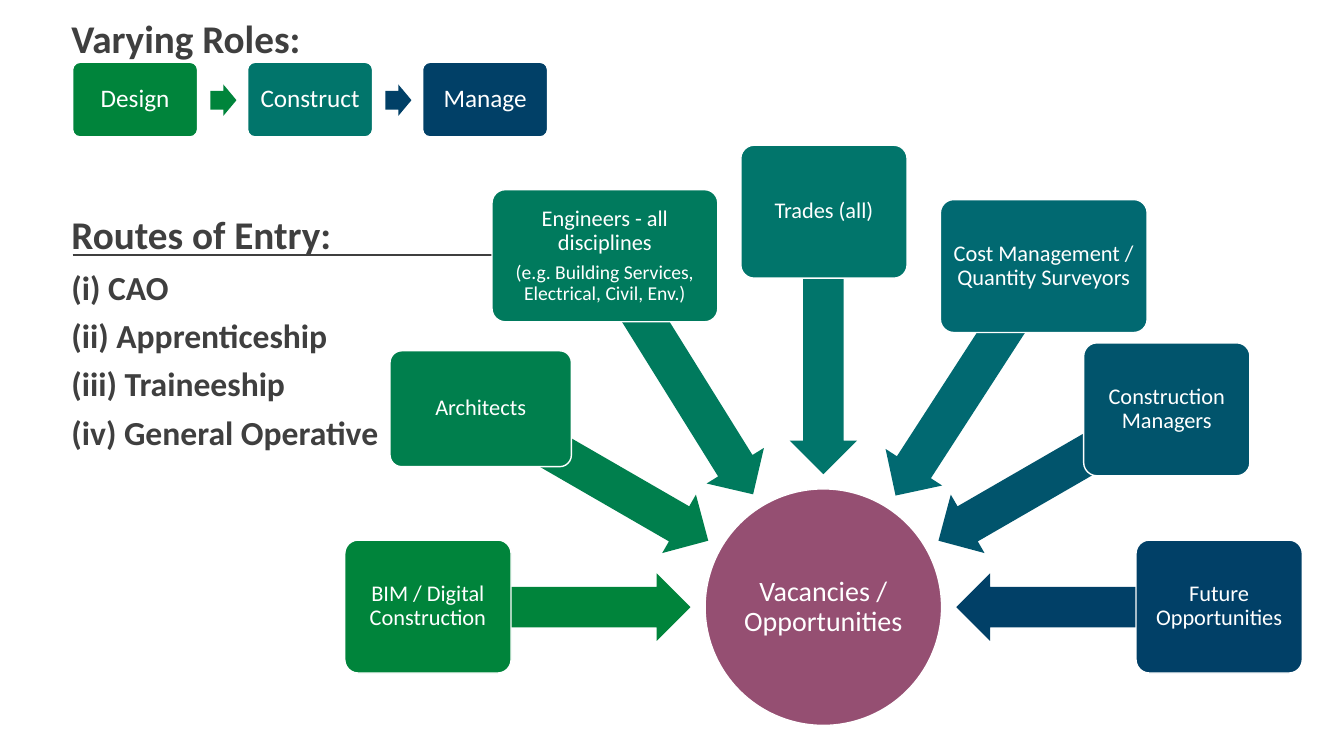
import math

import pptx
import pptx.dml.color
import pptx.enum.shapes
import pptx.enum.text
import pptx.oxml.ns
import pptx.util
from lxml import etree

Cm = pptx.util.Cm
Pt = pptx.util.Pt
Shape = pptx.enum.shapes.MSO_SHAPE
Align = pptx.enum.text.PP_ALIGN
Anchor = pptx.enum.text.MSO_ANCHOR
qn = pptx.oxml.ns.qn


class Theme:
    font = "Calibri"
    dark = "3F3F3F"
    white = "FFFFFF"
    plum = "954F72"
    green = "00843B"
    teal = "01756B"
    navy = "014067"
    fan = [green, "007F4D", "007A5D", teal, "016971", "01546C", navy]
    head = 28
    list = 24
    hub = 20
    step = 18
    role = 16
    note = 14


def write(frame, text, sizes, color=Theme.white, bold=False, align=Align.CENTER,
          anchor=Anchor.MIDDLE, inset=0.08, lead=0.9, gap=0):
    frame.word_wrap = True
    frame.auto_size = pptx.enum.text.MSO_AUTO_SIZE.NONE
    frame.vertical_anchor = anchor
    frame.margin_left = frame.margin_right = Cm(inset)
    frame.margin_top = frame.margin_bottom = Cm(min(inset, 0.13))
    for n, line in enumerate(text.split("\n")):
        para = frame.add_paragraph() if n else frame.paragraphs[0]
        para.alignment = align
        para.line_spacing = lead
        para.space_before = Pt(gap if n else 0)
        para.space_after = Pt(0)
        run = para.add_run()
        run.text = line
        run.font.name = Theme.font
        run.font.size = Pt(sizes[min(n, len(sizes) - 1)])
        run.font.bold = bold
        run.font.color.rgb = pptx.dml.color.RGBColor.from_string(color)


def draw(kind, left, top, wide, high, fill, edge=False, adjust=()):
    shape = slide.shapes.add_shape(kind, Cm(left), Cm(top), Cm(wide), Cm(high))
    shape.shadow.inherit = False
    shape.fill.solid()
    shape.fill.fore_color.rgb = pptx.dml.color.RGBColor.from_string(fill)
    if edge:
        shape.line.color.rgb = pptx.dml.color.RGBColor.from_string(Theme.white)
        shape.line.width = Pt(1)
    else:
        shape.line.fill.background()
    for n, value in enumerate(adjust):
        shape.adjustments[n] = value
    return shape


deck = pptx.Presentation()
deck.slide_width = Cm(33.87)
deck.slide_height = Cm(19.05)
slide = deck.slides.add_slide(deck.slide_layouts[1])

left_text = dict(color=Theme.dark, bold=True, align=Align.LEFT,
                 anchor=Anchor.TOP, inset=0.25, lead=1.2)

title = slide.shapes.title
title.left, title.top, title.width, title.height = Cm(1.55), Cm(4.93), Cm(10.1), Cm(1.6)
write(title.text_frame, "Routes of Entry:", [Theme.head], **left_text)

routes = slide.placeholders[1]
routes.left, routes.top, routes.width, routes.height = Cm(1.55), Cm(6.38), Cm(10.1), Cm(5.3)
write(routes.text_frame,
      "(i) CAO\n(ii) Apprenticeship\n(iii) Traineeship\n(iv) General Operative",
      [Theme.list], **left_text)
for para in routes.text_frame.paragraphs:
    props = para._p.get_or_add_pPr()
    props.set("marL", "0")
    props.set("indent", "0")
    etree.SubElement(props, qn("a:buNone"))

rule = slide.shapes.add_connector(pptx.enum.shapes.MSO_CONNECTOR.STRAIGHT,
                                  Cm(1.83), Cm(6.43), Cm(13.26), Cm(6.43))
rule.line.color.rgb = pptx.dml.color.RGBColor.from_string(Theme.dark)
rule.line.width = Pt(1.5)
etree.SubElement(rule._element.spPr, qn("a:effectLst"))

hub_x, hub_y, radius, reach, thick = 20.75, 15.3, 2.98, 3.35, 1.7
hub = draw(Shape.OVAL, hub_x - radius, hub_y - radius, 2 * radius, 2 * radius,
           Theme.plum, edge=True)
write(hub.text_frame, "Vacancies / Opportunities", [Theme.hub], inset=0.03)

roles = [
    ("BIM / Digital Construction", 180, 6.6, (8.69, 13.61, 4.19, 3.35)),
    ("Architects", 210, 6.6, (9.83, 8.84, 4.57, 2.92)),
    ("Engineers - all disciplines\n(e.g. Building Services, Electrical, Civil, Env.)",
     238.1, 7.04, (12.4, 4.78, 5.69, 3.33)),
    ("Trades (all)", 270, 6.6, (18.67, 3.66, 4.19, 3.35)),
    ("Cost Management / Quantity Surveyors", 302.9, 6.83, (23.7, 5.03, 5.21, 3.35)),
    ("Construction Managers", 330, 6.6, (27.31, 8.64, 4.19, 3.35)),
    ("Future Opportunities", 0, 6.6, (28.63, 13.61, 4.19, 3.35)),
]
for (text, angle, length, place), color in zip(roles, Theme.fan):
    far = reach + length / 2
    mid_x = hub_x + far * math.cos(math.radians(angle))
    mid_y = hub_y + far * math.sin(math.radians(angle))
    arrow = draw(Shape.LEFT_ARROW, mid_x - length / 2, mid_y - thick / 2,
                 length, thick, color, adjust=(0.6, 0.5))
    arrow.rotation = angle
    box = draw(Shape.ROUNDED_RECTANGLE, *place, color, edge=True, adjust=(0.1,))
    write(box.text_frame, text, [Theme.role, Theme.note], gap=5)

steps = [("Design", Theme.green), ("Construct", Theme.teal), ("Manage", Theme.navy)]
pitch = 4.41
for n, (text, color) in enumerate(steps):
    left = 1.83 + n * pitch
    if n:
        tint = Theme.green if n == 1 else Theme.navy
        draw(Shape.RIGHT_ARROW, left - 0.94, 2.13, 0.66, 0.79, tint, adjust=(0.6, 0.5))
    box = draw(Shape.ROUNDED_RECTANGLE, left, 1.57, 3.15, 1.88, color,
               edge=True, adjust=(0.1,))
    write(box.text_frame, text, [Theme.step])

label = slide.shapes.add_textbox(Cm(1.55), Cm(0), Cm(10.1), Cm(1.6))
write(label.text_frame, "Varying Roles:", [Theme.head], **left_text)

deck.save("out.pptx")
